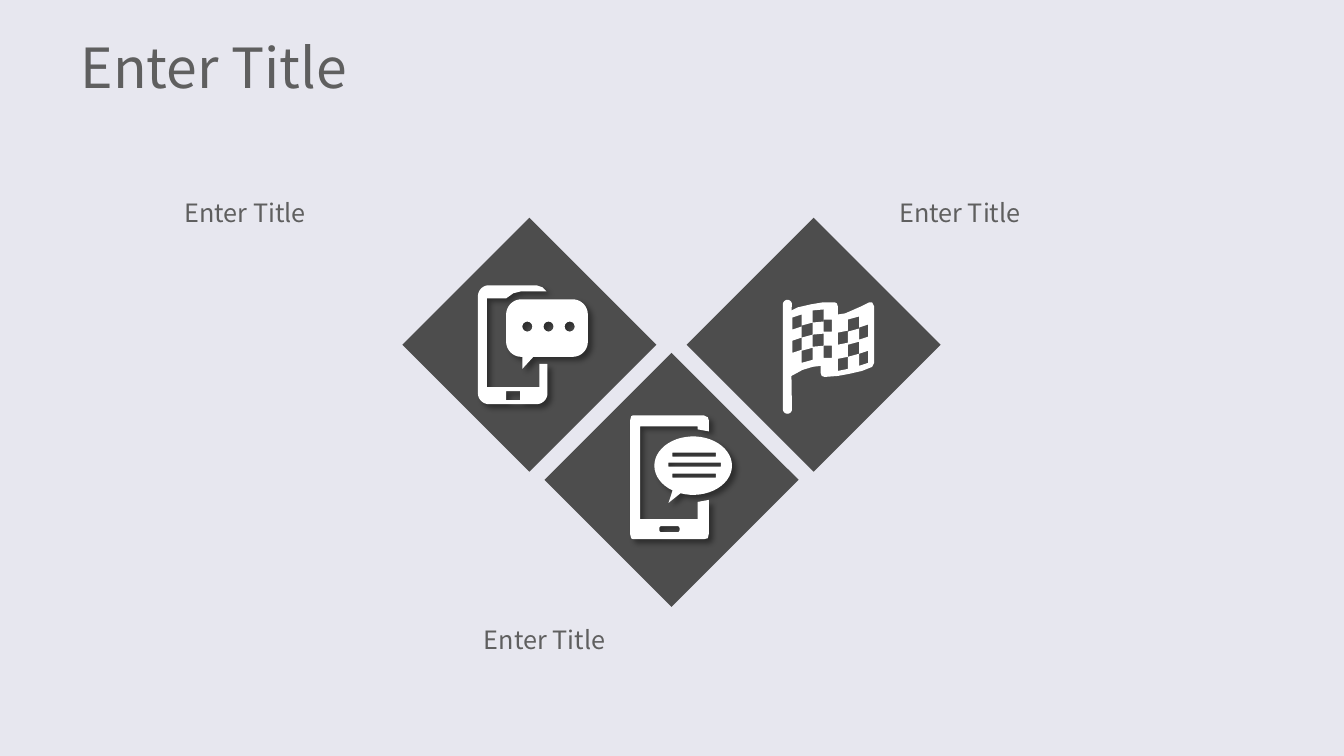
from math import cos, radians, sin

from lxml.etree import SubElement
from pptx import Presentation
from pptx.dml.color import RGBColor
from pptx.enum.shapes import MSO_SHAPE
from pptx.enum.text import MSO_ANCHOR
from pptx.oxml.ns import qn
from pptx.util import Inches, Pt

FONT = "Noto Sans CJK JP"
BACKGROUND, TILE, ICON, TEXT = "E7E7EF", "4D4D4D", "FFFFFF", "5F5F5F"
TILE_SIZE = 2.52


def color(value):
    return RGBColor.from_string(value)


def paint(shape, fill):
    shape.shadow.inherit = False
    shape.fill.solid()
    shape.fill.fore_color.rgb = color(fill)
    shape.line.fill.background()


# Outlines: lists of points in inches, angles clockwise from the right
def arc(cx, cy, rx, ry, start, end, steps=12):
    angles = [radians(start + (end - start) * i / steps) for i in range(steps + 1)]
    return [(cx + rx * cos(a), cy + ry * sin(a)) for a in angles]


def rectangle(x, y, w, h):
    return [(x, y), (x + w, y), (x + w, y + h), (x, y + h)]


def rounded(x, y, w, h, r, tail=()):
    right, bottom = x + w - r, y + h - r
    return [*arc(x + r, y + r, r, r, 180, 270), *arc(right, y + r, r, r, 270, 360),
            *arc(right, bottom, r, r, 0, 90), *tail,
            *arc(x + r, bottom, r, r, 90, 180)]


# Icons: outlines relative to the tile; inner outlines cut holes
def chat_phone():
    frame = [
        *arc(0.86, 0.78, 0.11, 0.11, 180, 270), (1.33, 0.67), (1.39, 0.69), (1.43, 0.73),
        (1.18, 0.73), (1.1, 0.75), (1.03, 0.8), (0.84, 0.8), (0.84, 1.68),
        (1.36, 1.68), (1.36, 1.45), (1.44, 1.45),
        *arc(1.33, 1.74, 0.11, 0.11, 0, 90), *arc(0.86, 1.74, 0.11, 0.11, 90, 180)]
    bubble = rounded(1.03, 0.81, 0.81, 0.57, 0.15,
                     tail=[(1.3, 1.38), (1.19, 1.5), (1.19, 1.38)])
    dots = [arc(1.24 + 0.21 * i, 1.08, 0.05, 0.05, 0, 360) for i in range(3)]
    return [frame, bubble, *dots, rectangle(1.03, 1.72, 0.14, 0.09)]


def message_phone():
    frame = [
        (0.88, 0.62), (1.58, 0.62), (1.62, 0.64), (1.63, 0.67), (1.63, 0.78),
        (1.52, 0.76), (1.52, 0.73), (0.95, 0.73), (0.95, 1.65), (1.52, 1.65),
        (1.52, 1.48), (1.63, 1.46), (1.63, 1.8), (1.62, 1.84), (1.58, 1.85),
        (0.88, 1.85), (0.86, 1.84), (0.85, 1.8), (0.85, 0.67), (0.86, 0.63)]
    bubble = [*arc(1.475, 1.12, 0.385, 0.29, 122, 469, 48), (1.23, 1.49)]
    lines = [rectangle(x, y, w, 0.04)
             for x, y, w in ((1.27, 0.99, 0.43), (1.23, 1.09, 0.52), (1.27, 1.2, 0.43))]
    return [frame, bubble, *lines, rounded(1.14, 1.72, 0.2, 0.06, 0.02)]


def race_flag():
    banner = [
        *arc(1, 0.86, 0.045, 0.045, 180, 360), (1.04, 0.92), (1.1, 0.89),
        (1.23, 0.86), (1.35, 0.84), (1.47, 0.84), (1.49, 0.85), (1.5, 0.88),
        (1.5, 0.96), (1.57, 0.95), (1.64, 0.92), (1.73, 0.88), (1.81, 0.84),
        (1.84, 0.84), (1.86, 0.88), (1.86, 1.44), (1.84, 1.48), (1.74, 1.52),
        (1.61, 1.55), (1.5, 1.57), (1.37, 1.58), (1.34, 1.57), (1.33, 1.54),
        (1.33, 1.47), (1.25, 1.48), (1.15, 1.51), (1.04, 1.57),
        *arc(1, 1.9, 0.045, 0.045, 0, 180)]
    # Each column: left, right, slope, tops of its two checks
    columns = [
        (1.05, 1.14, -0.03, (0.99, 1.22)), (1.14, 1.25, -0.03, (1.07, 1.32)),
        (1.25, 1.36, -0.01, (0.92, 1.16)), (1.36, 1.44, 0, (1.01, 1.27)),
        (1.5, 1.6, -0.02, (1.14, 1.4)), (1.6, 1.71, -0.03, (1.01, 1.26)),
        (1.71, 1.8, -0.03, (1.09, 1.35))]
    checks = [[(left, top), (right, top + slope), (right, top + slope + 0.12), (left, top + 0.12)]
              for left, right, slope, tops in columns for top in tops]
    return [banner, *checks]


def add_soft_shadow(shape):
    effects = shape._element.spPr.find(qn("a:effectLst"))
    shadow = SubElement(effects, qn("a:outerShdw"), blurRad=str(Pt(4)), dist=str(Pt(4)),
                        dir=str(45 * 60000), algn="tl", rotWithShape="0")
    black = SubElement(shadow, qn("a:srgbClr"), val="000000")
    SubElement(black, qn("a:alpha"), val="40000")


def add_icon(slide, left, top, outlines, shadowed):
    paths = [[(Inches(x), Inches(y)) for x, y in outline] for outline in outlines]
    builder = slide.shapes.build_freeform(*paths[0][0])
    builder.add_line_segments(paths[0][1:])
    for start, *rest in paths[1:]:
        builder.move_to(*start)
        builder.add_line_segments(rest)
    icon = builder.convert_to_shape(Inches(left), Inches(top))
    paint(icon, ICON)
    if shadowed:
        add_soft_shadow(icon)


def add_tile(slide, left, top, outlines, shadowed):
    diamond = slide.shapes.add_shape(MSO_SHAPE.DIAMOND, Inches(left), Inches(top),
                                     Inches(TILE_SIZE), Inches(TILE_SIZE))
    paint(diamond, TILE)
    add_icon(slide, left, top, outlines, shadowed)


def add_text(slide, left, top, width, height, text, size):
    frame = slide.shapes.add_textbox(Inches(left), Inches(top),
                                     Inches(width), Inches(height)).text_frame
    frame.word_wrap = True
    paragraph = frame.paragraphs[0]
    paragraph.text = text
    paragraph.font.name = FONT
    paragraph.font.size = Pt(size)
    paragraph.font.color.rgb = color(TEXT)
    return frame


def add_heading(slide, left, top, width, height):
    heading = add_text(slide, left, top, width, height, "Enter Title", 39.5)
    heading.vertical_anchor = MSO_ANCHOR.MIDDLE
    heading.margin_left = heading.margin_right = Inches(0.13)
    heading.margin_top = heading.margin_bottom = Inches(0.07)


def add_caption(slide, left, top):
    caption = add_text(slide, left, top, 2.78, 1.08, "Enter Title", 18)
    caption.paragraphs[0].line_spacing = 1.2


def main():
    deck = Presentation()
    deck.slide_width, deck.slide_height = Inches(13.33), Inches(7.5)
    slide = deck.slides.add_slide(deck.slide_layouts[6])
    slide.background.fill.solid()
    slide.background.fill.fore_color.rgb = color(BACKGROUND)

    # Three diamonds in a V
    left, top, step_x, step_y = 3.99, 2.16, 1.41, 1.34
    add_tile(slide, left + 2 * step_x, top, race_flag(), shadowed=False)
    add_tile(slide, left, top, chat_phone(), shadowed=True)
    add_tile(slide, left + step_x, top + step_y, message_phone(), shadowed=True)

    # Captions and heading
    for caption_left, caption_top in ((1.73, 1.85), (4.7, 6.08), (8.82, 1.85)):
        add_caption(slide, caption_left, caption_top)
    add_heading(slide, 0.67, 0.3, 12, 0.72)
    deck.save("out.pptx")


if __name__ == "__main__":
    main()
